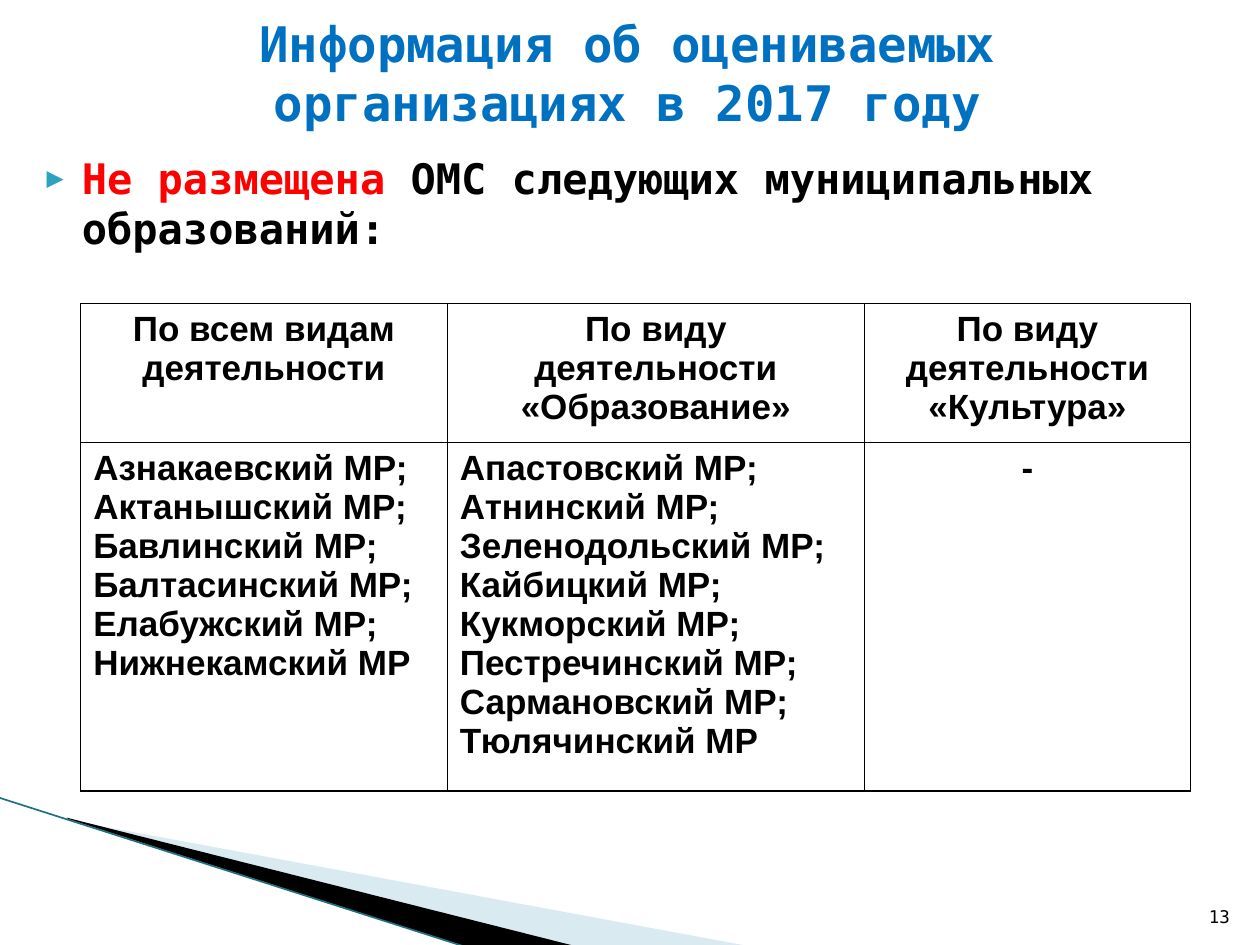
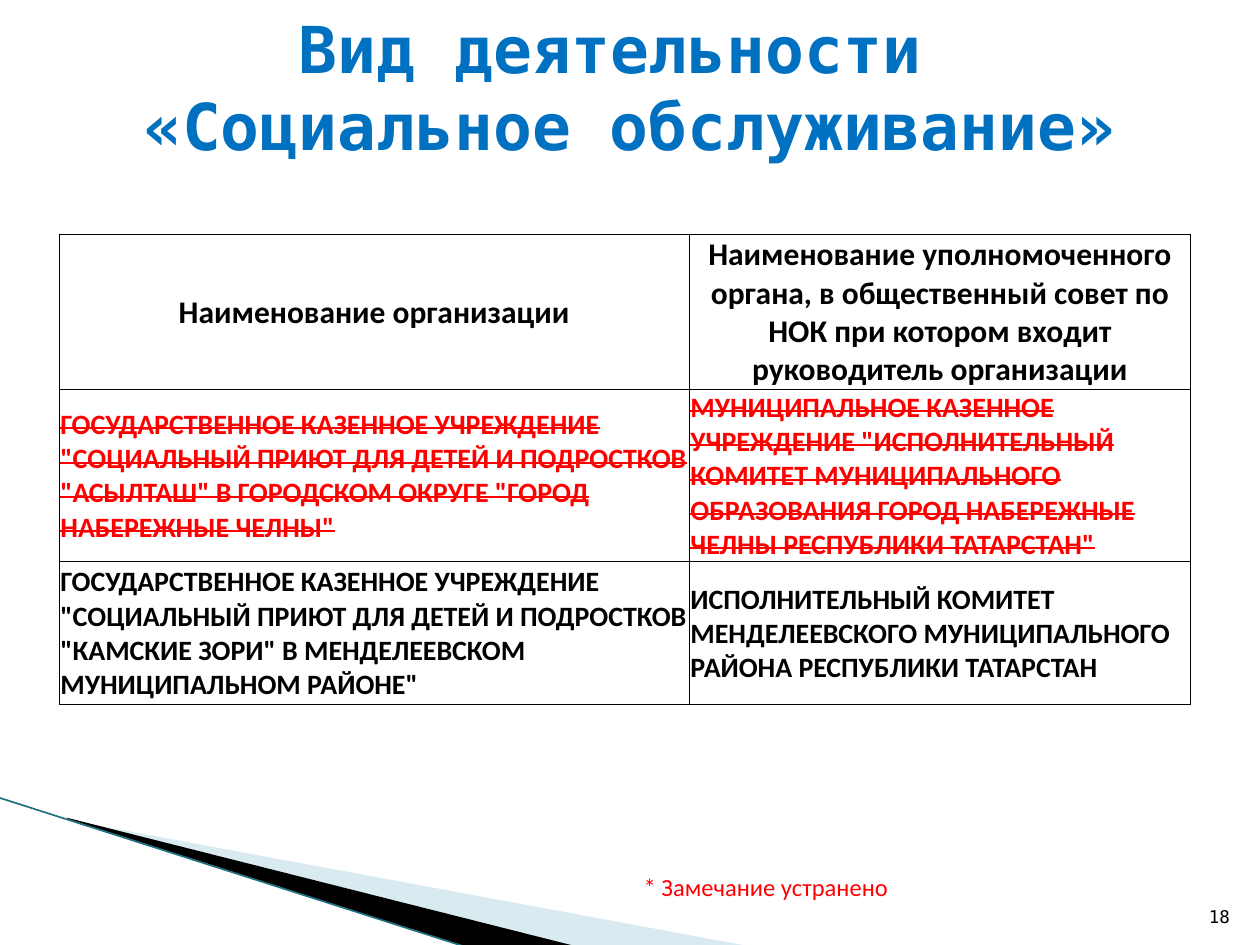
from lxml import etree
from pptx import Presentation
from pptx.dml.color import RGBColor
from pptx.enum.shapes import MSO_CONNECTOR
from pptx.enum.text import MSO_ANCHOR, MSO_AUTO_SIZE, PP_ALIGN
from pptx.oxml.ns import qn
from pptx.util import Inches, Pt

LEFT, CENTER, RIGHT = PP_ALIGN.LEFT, PP_ALIGN.CENTER, PP_ALIGN.RIGHT
TOP, MIDDLE, BOTTOM = MSO_ANCHOR.TOP, MSO_ANCHOR.MIDDLE, MSO_ANCHOR.BOTTOM
NO_FIT = MSO_AUTO_SIZE.NONE
STRAIGHT = MSO_CONNECTOR.STRAIGHT
TITLE_LAYOUT_BODY, TITLE_LAYOUT_ONLY = 1, 5

MONO = "DejaVu Sans Mono"
BLACK, RED, BLUE = "000000", "FF0000", "0070C0"
TEAL, PALE, EDGE = "2DA2BF", "A0CBDC", "1F7083"


def color(value):
    return RGBColor.from_string(value)


def sub(parent, tag, **attrs):
    """Append an XML child such as 'a:ln' and return it."""
    child = etree.SubElement(parent, qn(tag))
    for name, value in attrs.items():
        child.set(name, str(value))
    return child


def place(shape, left, top, width, height):
    shape.left, shape.top = Inches(left), Inches(top)
    shape.width, shape.height = Inches(width), Inches(height)


def add_run(p, text, size=20, font="Arial", fill=BLACK, bold=False, strike=False):
    r = p.add_run()
    r.text = text
    r.font.size, r.font.name, r.font.bold = Pt(size), font, bold
    r.font.color.rgb = color(fill)
    if strike:
        r.font._element.set("strike", "sngStrike")


def write(tf, text, align=LEFT, anchor=TOP, **style):
    """Fill a text frame; each line of text becomes a paragraph."""
    tf.word_wrap = True
    tf.vertical_anchor = anchor
    for i, line in enumerate(text.split("\n")):
        p = tf.add_paragraph() if i else tf.paragraphs[0]
        p.alignment = align
        add_run(p, line, **style)


def add_text(s, box, text, **style):
    tf = s.shapes.add_textbox(*map(Inches, box)).text_frame
    write(tf, text, **style)


def add_band(s, points, fill, alpha=None):
    start, *rest = [(Inches(x), Inches(y)) for x, y in points]
    builder = s.shapes.build_freeform(*start)
    builder.add_line_segments(rest)
    band = builder.convert_to_shape()
    band.shadow.inherit = False
    band.line.fill.background()
    band.fill.solid()
    band.fill.fore_color.rgb = color(fill)
    if alpha:
        sub(band._element.spPr.find(".//" + qn("a:srgbClr")), "a:alpha", val=alpha * 1000)


def add_corner(s):
    add_band(s, [(0.55, 6.51), (5.95, 7.51), (4.56, 7.51), (0.55, 6.5)], PALE, alpha=40)
    add_band(s, [(0.53, 6.49), (4.57, 7.51), (3.72, 7.52), (0.54, 6.5)], BLACK)
    edge = s.shapes.add_connector(STRAIGHT, *map(Inches, (-0.01, 6.33, 3.71, 7.52)))
    edge.line.color.rgb = color(EDGE)
    edge.line.width = Pt(0.95)
    sub(edge._element.spPr, "a:effectLst")


def new_slide(prs, layout, title, title_box, title_size, number):
    s = prs.slides.add_slide(prs.slide_layouts[layout])
    add_corner(s)
    place(s.shapes.title, *title_box)
    tf = s.shapes.title.text_frame
    tf.auto_size = NO_FIT
    write(tf, title, align=CENTER, anchor=MIDDLE, size=title_size, font=MONO,
          fill=BLUE, bold=True)
    add_text(s, (9.46, 7.01, 0.4, 0.4), number, align=RIGHT, anchor=BOTTOM,
             size=10, font=MONO)
    return s


def add_bullet(body, *runs):
    """Write one bulleted paragraph from (text, colour) pairs."""
    tf = body.text_frame
    tf.auto_size = NO_FIT
    p = tf.paragraphs[0]
    p.space_before = Pt(0)
    pPr = p._p.get_or_add_pPr()
    pPr.set("marL", str(Inches(0.4)))
    pPr.set("indent", str(Inches(-0.28)))
    sub(sub(pPr, "a:buClr"), "a:srgbClr", val=TEAL)
    sub(pPr, "a:buSzPct", val=68000)
    sub(pPr, "a:buFont", typeface=MONO)
    sub(pPr, "a:buChar", char="▶")
    for text, fill in runs:
        add_run(p, text, size=24, font=MONO, fill=fill, bold=True)


def border(cell, width):
    tcPr = cell._tc.get_or_add_tcPr()
    for side in ("a:lnL", "a:lnR", "a:lnT", "a:lnB"):
        ln = sub(tcPr, side, w=Pt(width))
        sub(sub(ln, "a:solidFill"), "a:srgbClr", val=BLACK)


def add_table(s, left, top, widths, heights, rows, line, margins=None):
    """Draw rows of (text, format) cells."""
    table = s.shapes.add_table(
        len(rows), len(widths), Inches(left), Inches(top),
        Inches(sum(widths)), Inches(sum(heights))).table
    table.first_row = table.horz_banding = False
    for column, width in zip(table.columns, widths):
        column.width = Inches(width)
    for row, height in zip(table.rows, heights):
        row.height = Inches(height)
    for i, row in enumerate(rows):
        for j, (text, style) in enumerate(row):
            cell = table.cell(i, j)
            border(cell, line)
            cell.fill.background()
            if margins:
                (cell.margin_left, cell.margin_top, cell.margin_right,
                 cell.margin_bottom) = map(Inches, margins)
            write(cell.text_frame, text, bold=True, **style)
            cell.vertical_anchor = style.get("anchor", TOP)


def missing_slide(prs):
    s = new_slide(prs, TITLE_LAYOUT_BODY, "Информация об оцениваемых организациях в 2017 году",
                  (0.48, 0.13, 9, 0.89), 28, "13")
    body = s.placeholders[1]
    place(body, 0.15, 1.16, 9.66, 6.09)
    add_bullet(body, ("Не размещена ", RED),
               ("ОМС следующих муниципальных образований:", BLACK))

    heads = ["По всем видам деятельности", "По виду деятельности «Образование»",
             "По виду деятельности «Культура»"]
    districts = [
        ["Азнакаевский", "Актанышский", "Бавлинский", "Балтасинский", "Елабужский",
         "Нижнекамский"],
        ["Апастовский", "Атнинский", "Зеленодольский", "Кайбицкий", "Кукморский",
         "Пестречинский", "Сармановский", "Тюлячинский"],
    ]
    centered = {"align": CENTER}
    lists = [(";\n".join(f"{name} МР" for name in names), {}) for names in districts]
    rows = [[(head, centered) for head in heads], lists + [("-", centered)]]
    add_table(s, 0.64, 2.41, [2.91, 3.31, 2.59], [1.03, 2.61], rows, line=1)


def social_slide(prs):
    s = new_slide(prs, TITLE_LAYOUT_ONLY, "Вид деятельности \n«Социальное обслуживание»",
                  (0.5, 0.3, 9, 0.77), 36.9, "18")
    base = {"font": "Calibri", "anchor": MIDDLE}
    head = {**base, "size": 18, "align": CENTER}
    plain = {**base, "size": 16}
    struck = {**plain, "fill": RED, "strike": True}
    shelter = 'ГОСУДАРСТВЕННОЕ КАЗЕННОЕ УЧРЕЖДЕНИЕ "СОЦИАЛЬНЫЙ ПРИЮТ ДЛЯ ДЕТЕЙ И ПОДРОСТКОВ '
    rows = [
        [("Наименование организации", head),
         ("Наименование уполномоченного органа, в общественный совет по НОК "
          "при котором входит руководитель организации", head)],
        [(shelter + '"АСЫЛТАШ" В ГОРОДСКОМ ОКРУГЕ "ГОРОД НАБЕРЕЖНЫЕ ЧЕЛНЫ"', struck),
         ('МУНИЦИПАЛЬНОЕ КАЗЕННОЕ УЧРЕЖДЕНИЕ "ИСПОЛНИТЕЛЬНЫЙ КОМИТЕТ МУНИЦИПАЛЬНОГО '
          'ОБРАЗОВАНИЯ ГОРОД НАБЕРЕЖНЫЕ ЧЕЛНЫ РЕСПУБЛИКИ ТАТАРСТАН"', struck)],
        [(shelter + '"КАМСКИЕ ЗОРИ" В МЕНДЕЛЕЕВСКОМ МУНИЦИПАЛЬНОМ РАЙОНЕ"', plain),
         ("ИСПОЛНИТЕЛЬНЫЙ КОМИТЕТ МЕНДЕЛЕЕВСКОГО МУНИЦИПАЛЬНОГО РАЙОНА "
          "РЕСПУБЛИКИ ТАТАРСТАН", plain)],
    ]
    add_table(s, 0.47, 1.86, [5, 3.98], [1.23, 1.37, 1.13], rows, line=0.5,
              margins=(0.01, 0.01, 0.01, 0))
    add_text(s, (5.01, 6.87, 2.59, 0.34), "* Замечание устранено", size=14,
             font="Calibri", fill=RED)


def main():
    prs = Presentation()
    prs.slide_width, prs.slide_height = Inches(10), Inches(7.5)
    missing_slide(prs)
    social_slide(prs)
    prs.save("out.pptx")


if __name__ == "__main__":
    main()
